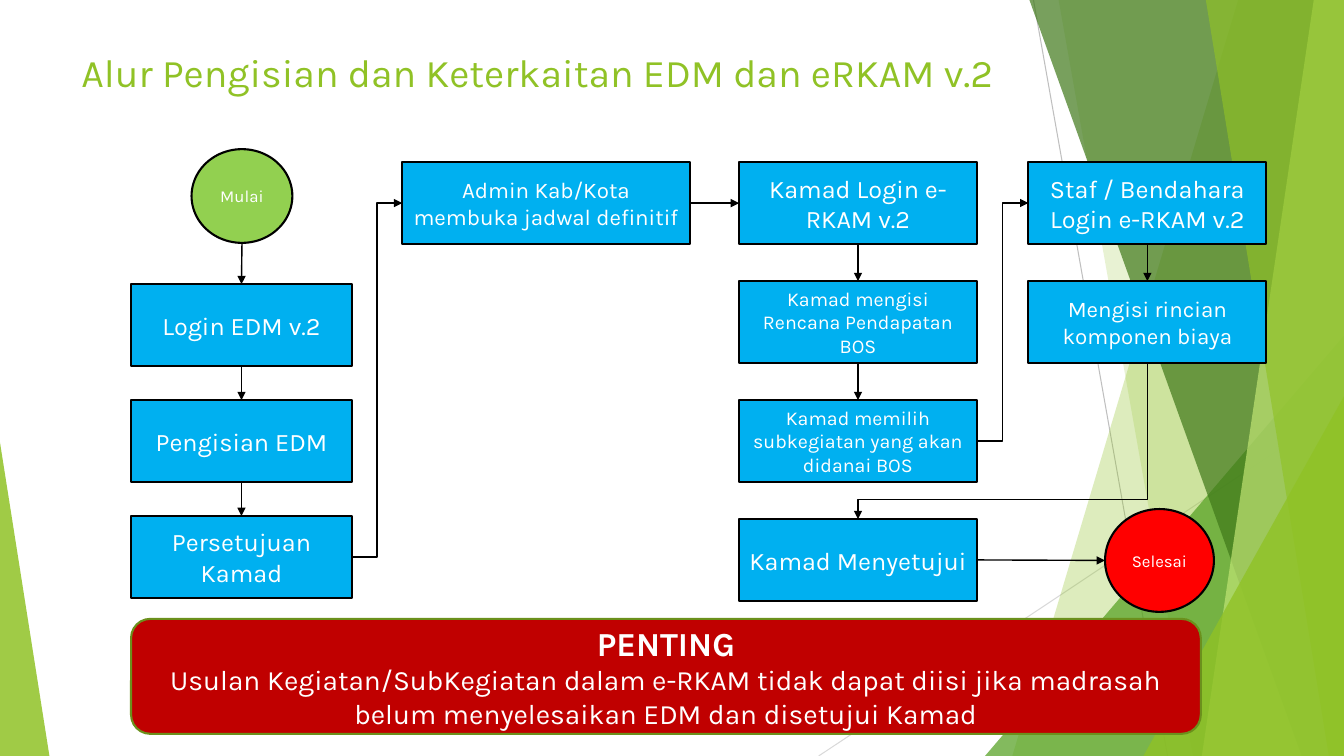
from lxml import etree
from pptx import Presentation
from pptx.dml.color import RGBColor
from pptx.enum import shapes, text
from pptx.oxml.ns import qn
from pptx.util import Inches, Pt

THEME = {
    "font": "Karla",
    "title": "90C226", "step": "00B0F0", "start": "92D050", "finish": "FF0000",
    "notice": "C00000", "notice_edge": "6B901C", "ink": "000000", "white": "FFFFFF",
    "size": {"title": 28, "large": 18, "medium": 16, "small": 14, "terminal": 12,
             "notice_head": 24, "notice_body": 20},
    "edge": 1.5, "arrow": 1, "hairline": 0.75,
}
SLIDE_W, SLIDE_H = 13.33, 7.5

TITLE = "Alur Pengisian dan Keterkaitan EDM dan eRKAM v.2"
NOTICE = [
    ("PENTING", "notice_head", True),
    ("Usulan Kegiatan/SubKegiatan dalam e-RKAM tidak dapat diisi jika madrasah "
     "belum menyelesaikan EDM dan disetujui Kamad", "notice_body", False),
]

COLUMNS = {
    "edm": {"left": 1.3, "width": 2.19, "top": 1.67, "pitch": 1.15},
    "admin": {"left": 3.99, "width": 2.85, "top": 1.61, "pitch": 1.18},
    "kamad": {"left": 7.33, "width": 2.36, "top": 1.61, "pitch": 1.18},
    "staf": {"left": 10.2, "width": 2.36, "top": 1.61, "pitch": 1.18},
}
STEP_HEIGHT = 0.81
STEPS = {
    "login_edm": ("edm", 1, "Login EDM v.2", "large"),
    "pengisian": ("edm", 2, "Pengisian EDM", "large"),
    "persetujuan": ("edm", 3, "Persetujuan Kamad", "large"),
    "jadwal": ("admin", 0, "Admin Kab/Kota membuka jadwal definitif", "medium"),
    "login_kamad": ("kamad", 0, "Kamad Login e-RKAM v.2", "large"),
    "pendapatan": ("kamad", 1, "Kamad mengisi Rencana Pendapatan BOS", "small"),
    "subkegiatan": ("kamad", 2, "Kamad memilih subkegiatan yang akan didanai BOS", "small"),
    "menyetujui": ("kamad", 3, "Kamad Menyetujui", "large"),
    "login_staf": ("staf", 0, "Staf / Bendahara Login e-RKAM v.2", "large"),
    "rincian": ("staf", 1, "Mengisi rincian komponen biaya", "medium"),
}
TERMINALS = {
    "mulai": ("Mulai", "start", (1.9, 1.48, 1, 0.93)),
    "selesai": ("Selesai", "finish", (10.96, 5.05, 1.08, 1.02)),
}
TOP, LEFT, BOTTOM, RIGHT = range(4)
FLOW = [
    ("mulai", BOTTOM, "login_edm", TOP),
    ("login_edm", BOTTOM, "pengisian", TOP),
    ("pengisian", BOTTOM, "persetujuan", TOP),
    ("persetujuan", RIGHT, "jadwal", LEFT),
    ("jadwal", RIGHT, "login_kamad", LEFT),
    ("login_kamad", BOTTOM, "pendapatan", TOP),
    ("pendapatan", BOTTOM, "subkegiatan", TOP),
    ("subkegiatan", RIGHT, "login_staf", LEFT),
    ("login_staf", BOTTOM, "rincian", TOP),
    ("rincian", BOTTOM, "menyetujui", TOP),
    ("menyetujui", RIGHT, "selesai", LEFT),
]
LAST_BEND = 87500

RAYS = [((10.25, 0), (11.58, 7.5), "BFBFBF"), ((13.33, 4.03), (8.12, 7.5), "D9D9D9")]
FACETS = [
    ("band", (12.28, 10.04), "90C226", 30),
    ("band", (10.5, 11.83), "90C226", 20),
    ("corner", (9.77, 3.33, 3.56, 4.17, 1), "54A021", 72),
    ("band", (10.21, 12.91), "3F7819", 70),
    ("band", (13.03, 11.92), "C0E474", 70),
    ("band", (11.96, 13.18), "90C226", 65),
    ("corner", (11.34, 3.93, 1.99, 3.57, 1), "90C226", 80),
    ("corner", (0, 4.39, 0.49, 3.11, 0), "90C226", 85),
]

deck = Presentation()
deck.slide_width, deck.slide_height = Inches(SLIDE_W), Inches(SLIDE_H)
slide = deck.slides.add_slide(deck.slide_layouts[6])


def rgb(name):
    return RGBColor.from_string(THEME.get(name, name))


def write(frame, words, size, color="white", bold=False, align=text.PP_ALIGN.CENTER,
          anchor=text.MSO_ANCHOR.MIDDLE, first=True):
    frame.word_wrap = True
    frame.vertical_anchor = anchor
    paragraph = frame.paragraphs[0] if first else frame.add_paragraph()
    paragraph.alignment = align
    run = paragraph.add_run()
    run.text = words
    run.font.name, run.font.size, run.font.bold = THEME["font"], Pt(THEME["size"][size]), bold
    run.font.color.rgb = rgb(color)


def paint(shape, fill, edge=None, opacity=100):
    shape.shadow.inherit = False
    shape.fill.solid()
    shape.fill.fore_color.rgb = rgb(fill)
    if opacity < 100:
        color = shape.fill._xPr.find(qn("a:solidFill"))[0]
        etree.SubElement(color, qn("a:alpha")).set("val", str(opacity * 1000))
    if edge:
        shape.line.color.rgb = rgb(edge)
        shape.line.width = Pt(THEME["edge"])
    else:
        shape.line.fill.background()


def node(kind, box, fill, edge="ink"):
    shape = slide.shapes.add_shape(kind, *map(Inches, box))
    paint(shape, fill, edge)
    return shape


def connect(kind, begin, end, color, width):
    line = slide.shapes.add_connector(kind, *begin, *end)
    line.line.color.rgb = rgb(color)
    line.line.width = Pt(width)
    etree.SubElement(line._element.spPr, qn("a:effectLst"))
    return line


def site(shape, side):
    across = {LEFT: 0, RIGHT: shape.width}.get(side, shape.width // 2)
    down = {TOP: 0, BOTTOM: shape.height}.get(side, shape.height // 2)
    return shape.left + across, shape.top + down


def turn_downward(arrow, begin, end):
    run, drop = begin[0] - end[0], end[1] - begin[1]
    middle_x, middle_y = (begin[0] + end[0]) // 2, (begin[1] + end[1]) // 2
    arrow.begin_x, arrow.end_x = middle_x - drop // 2, middle_x + drop // 2
    arrow.begin_y, arrow.end_y = middle_y - run // 2, middle_y + run // 2
    properties = arrow._element.spPr
    properties.find(qn("a:xfrm")).set("rot", str(90 * 60000))
    guides = properties.find(qn("a:prstGeom")).get_or_add_avLst()
    etree.SubElement(guides, qn("a:gd"), name="adj1", fmla=f"val {LAST_BEND}")


def flow_arrow(source, source_side, target, target_side):
    begin, end = site(source, source_side), site(target, target_side)
    aligned = min(abs(begin[0] - end[0]), abs(begin[1] - end[1])) < Inches(0.02)
    kind = shapes.MSO_CONNECTOR.STRAIGHT if aligned else shapes.MSO_CONNECTOR.ELBOW
    arrow = connect(kind, begin, end, "ink", THEME["arrow"])
    arrow.begin_connect(source, source_side)
    arrow.end_connect(target, target_side)
    for tag, shape, side in (("a:stCxn", source, source_side), ("a:endCxn", target, target_side)):
        if shape.auto_shape_type == shapes.MSO_SHAPE.OVAL:
            next(arrow._element.iter(qn(tag))).set("idx", str(side * 2))
    if not aligned and source_side == BOTTOM:
        turn_downward(arrow, begin, end)
    etree.SubElement(arrow.line._get_or_add_ln(), qn("a:tailEnd"), type="triangle")


for begin, end, color in RAYS:
    connect(shapes.MSO_CONNECTOR.STRAIGHT, map(Inches, begin), map(Inches, end),
            color, THEME["hairline"])

for form, place, color, opacity in FACETS:
    if form == "band":
        upper, lower = place
        outline = slide.shapes.build_freeform(Inches(upper), 0)
        outline.add_line_segments([(Inches(x), Inches(y)) for x, y in
                                   ((SLIDE_W, 0), (SLIDE_W, SLIDE_H), (lower, SLIDE_H))])
        facet = outline.convert_to_shape()
    else:
        facet = slide.shapes.add_shape(shapes.MSO_SHAPE.ISOSCELES_TRIANGLE,
                                       *map(Inches, place[:4]))
        facet.adjustments[0] = place[4]
    paint(facet, color, opacity=opacity)

heading = slide.shapes.add_textbox(*map(Inches, (0.71, 0.43, 9.4, 0.71)))
write(heading.text_frame, TITLE, "title", color="title",
      align=text.PP_ALIGN.LEFT, anchor=text.MSO_ANCHOR.TOP)

nodes = {}
for key, (words, fill, box) in TERMINALS.items():
    nodes[key] = node(shapes.MSO_SHAPE.OVAL, box, fill)
    write(nodes[key].text_frame, words, "terminal")
for key, (column_key, row, words, size) in STEPS.items():
    column = COLUMNS[column_key]
    box = (column["left"], column["top"] + row * column["pitch"], column["width"], STEP_HEIGHT)
    nodes[key] = node(shapes.MSO_SHAPE.RECTANGLE, box, "step")
    write(nodes[key].text_frame, words, size)

for source, source_side, target, target_side in FLOW:
    flow_arrow(nodes[source], source_side, nodes[target], target_side)

notice = node(shapes.MSO_SHAPE.ROUNDED_RECTANGLE, (1.3, 6.14, 10.61, 1.14), "notice", "notice_edge")
for order, (words, size, bold) in enumerate(NOTICE):
    write(notice.text_frame, words, size, bold=bold, first=order == 0)

deck.save("out.pptx")
